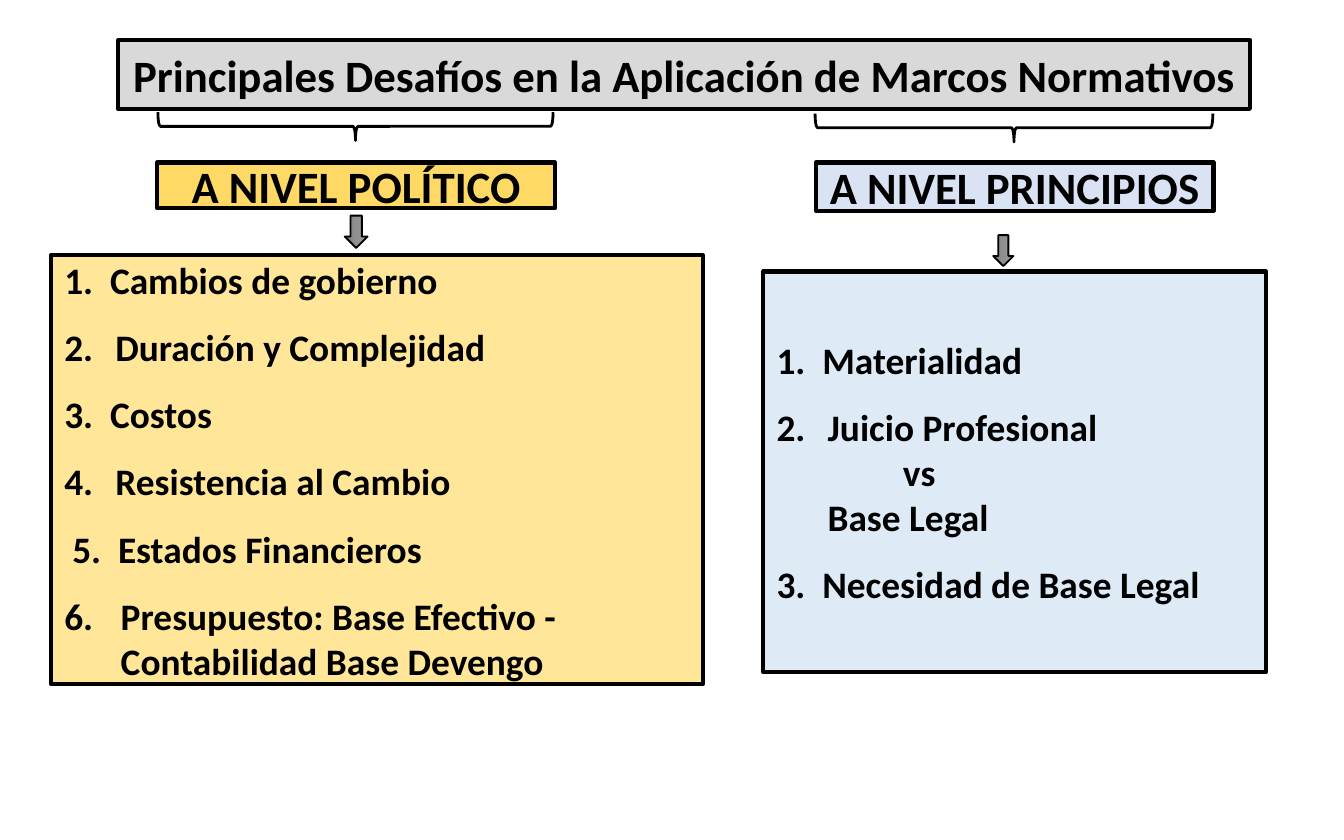
from copy import deepcopy

from lxml import etree
from pptx import Presentation
from pptx.dml.color import RGBColor
from pptx.enum.shapes import MSO_SHAPE
from pptx.enum.text import MSO_ANCHOR, PP_ALIGN
from pptx.oxml.ns import qn
from pptx.util import Inches, Pt

RECTANGLE = MSO_SHAPE.RECTANGLE
RIGHT_ARROW = MSO_SHAPE.RIGHT_ARROW
LEFT_BRACE = MSO_SHAPE.LEFT_BRACE
MIDDLE = MSO_ANCHOR.MIDDLE
CENTER = PP_ALIGN.CENTER
LEFT = PP_ALIGN.LEFT


def color(value):
    return RGBColor.from_string(value)


def add_outlined(kind, bounds, width, fill=None):
    shape = slide.shapes.add_shape(kind, *map(Inches, bounds))
    shape.shadow.inherit = False
    shape.line.color.rgb = color("000000")
    shape.line.width = Pt(width)
    if fill:
        shape.fill.solid()
        shape.fill.fore_color.rgb = color(fill)
    else:
        shape.fill.background()
    return shape


presentation = Presentation()
presentation.slide_width = Inches(10)
presentation.slide_height = Inches(6.25)
slide = presentation.slides.add_slide(presentation.slide_layouts[6])

font_format = {"name": "Calibri", "bold": True}

headings = [
    ("Principales Desafíos en la Aplicación de Marcos Normativos", (0.88, 0.3, 8.42, 0.51), "D9D9D9"),
    ("A NIVEL POLÍTICO", (1.17, 1.21, 2.96, 0.34), "FFD966"),
    ("A NIVEL PRINCIPIOS", (6.07, 1.21, 2.96, 0.36), "DAE3F3"),
]
for text, bounds, fill in headings:
    shape = add_outlined(RECTANGLE, bounds, 2.25, fill)
    shape.text_frame.word_wrap = True
    shape.text_frame.vertical_anchor = MIDDLE
    paragraph = shape.text_frame.paragraphs[0]
    paragraph.text = text
    paragraph.alignment = CENTER
    for name, value in font_format.items():
        setattr(paragraph.font, name, value)
    paragraph.font.size = Pt(24)
    paragraph.font.color.rgb = color("000000")

# text, number, number position, text position, space after
political_items = [
    ("Cambios de gobierno", 1, 0, 0.34, 12),
    ("Duración y Complejidad", 2, 0, 0.38, 12),
    ("Costos", 3, 0, 0.34, 12),
    ("Resistencia al Cambio", 4, 0, 0.38, 12),
    ("Estados Financieros", 5, 0.06, 0.4, 12),
    ("Presupuesto: Base Efectivo - Contabilidad Base Devengo", 6, 0, 0.42, 12),
]
principle_items = [
    ("Materialidad", 1, 0, 0.34, 12),
    ("Juicio Profesional", 2, 0, 0.38, 0),
    ("vs", None, 0.94, 0.94, 0),
    ("Base Legal", None, 0.38, 0.38, 12),
    ("Necesidad de Base Legal", 3, 0, 0.34, 12),
]
lists = [
    (political_items, (0.38, 1.9, 4.85, 3.19), "FFE699"),
    (principle_items, (5.68, 2.02, 3.74, 2.98), "DEEBF7"),
]
for items, bounds, fill in lists:
    shape = add_outlined(RECTANGLE, bounds, 2.25, fill)
    text_frame = shape.text_frame
    text_frame.word_wrap = True
    text_frame.vertical_anchor = MIDDLE
    for index, (text, number, number_left, text_left, space) in enumerate(items):
        paragraph = text_frame.add_paragraph() if index else text_frame.paragraphs[0]
        paragraph.text = text
        paragraph.alignment = LEFT
        paragraph.space_after = Pt(space)
        properties = paragraph._p.get_or_add_pPr()
        properties.set("marL", str(Inches(text_left)))
        properties.set("indent", str(Inches(number_left) - Inches(text_left)))
        if number:
            bullet = etree.SubElement(properties, qn("a:buAutoNum"))
            bullet.set("type", "arabicPeriod")
            bullet.set("startAt", str(number))
        for name, value in font_format.items():
            setattr(paragraph.font, name, value)
        paragraph.font.size = Pt(20)
        paragraph.font.color.rgb = color("000000")

gradient_colors = [(0, "9D9D9D"), (0.5, "909090"), (1, "7C7C7C")]
for bounds in [(2.53, 1.64, 0.24, 0.17), (7.35, 1.79, 0.23, 0.15)]:
    arrow = add_outlined(RIGHT_ARROW, bounds, 1)
    arrow.rotation = 90
    arrow.fill.gradient()
    arrow.fill.gradient_angle = 270
    stop_list = arrow._element.spPr.find(".//" + qn("a:gsLst"))
    stop_list.append(deepcopy(stop_list[0]))
    for stop, (position, value) in zip(arrow.fill.gradient_stops, gradient_colors):
        stop.position = position
        stop.color.rgb = color(value)

for bounds in [(2.54, -0.53, 0.21, 2.94), (7.44, -0.53, 0.21, 2.96)]:
    brace = add_outlined(LEFT_BRACE, bounds, 1.5)
    brace.rotation = 270

presentation.save("out.pptx")
